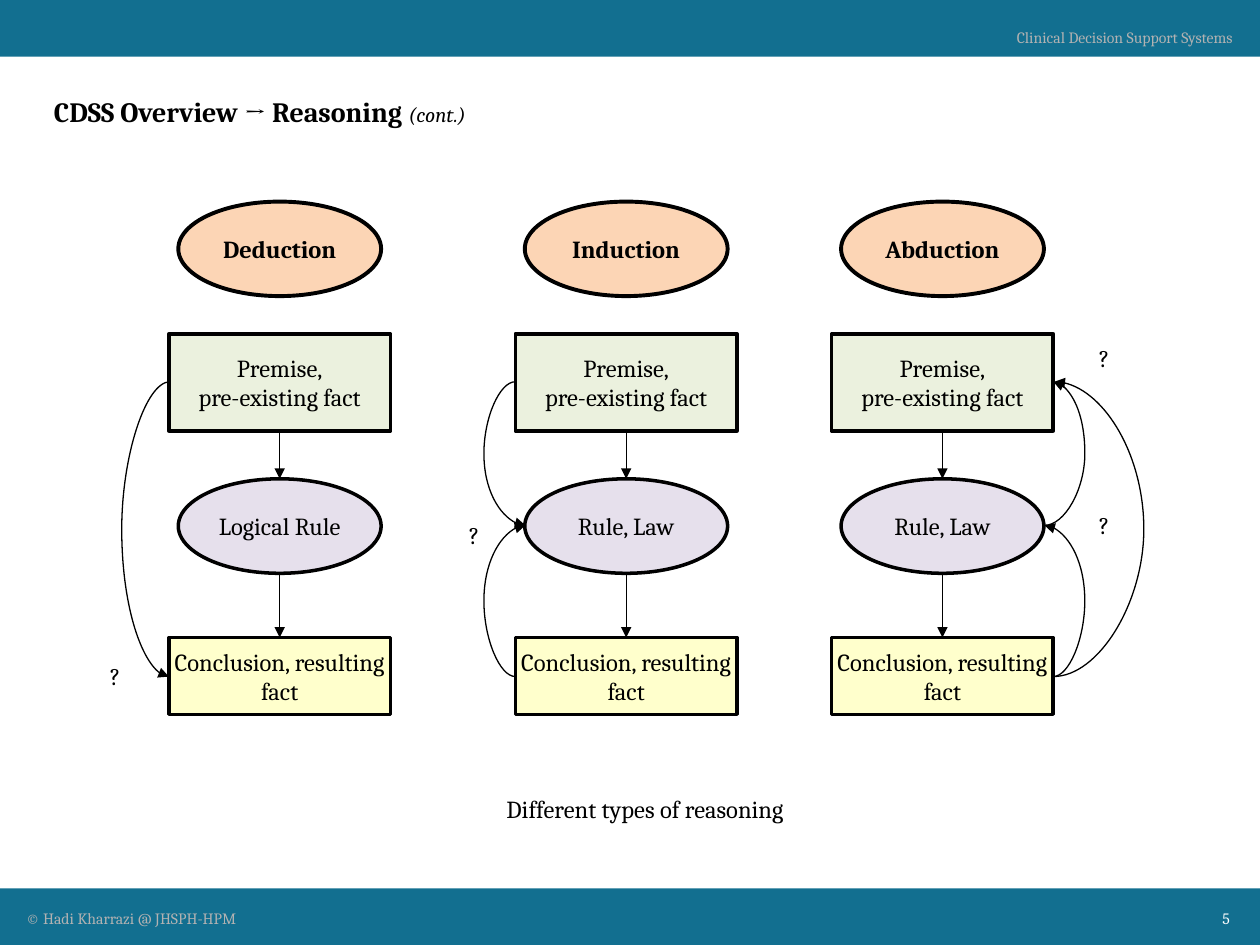
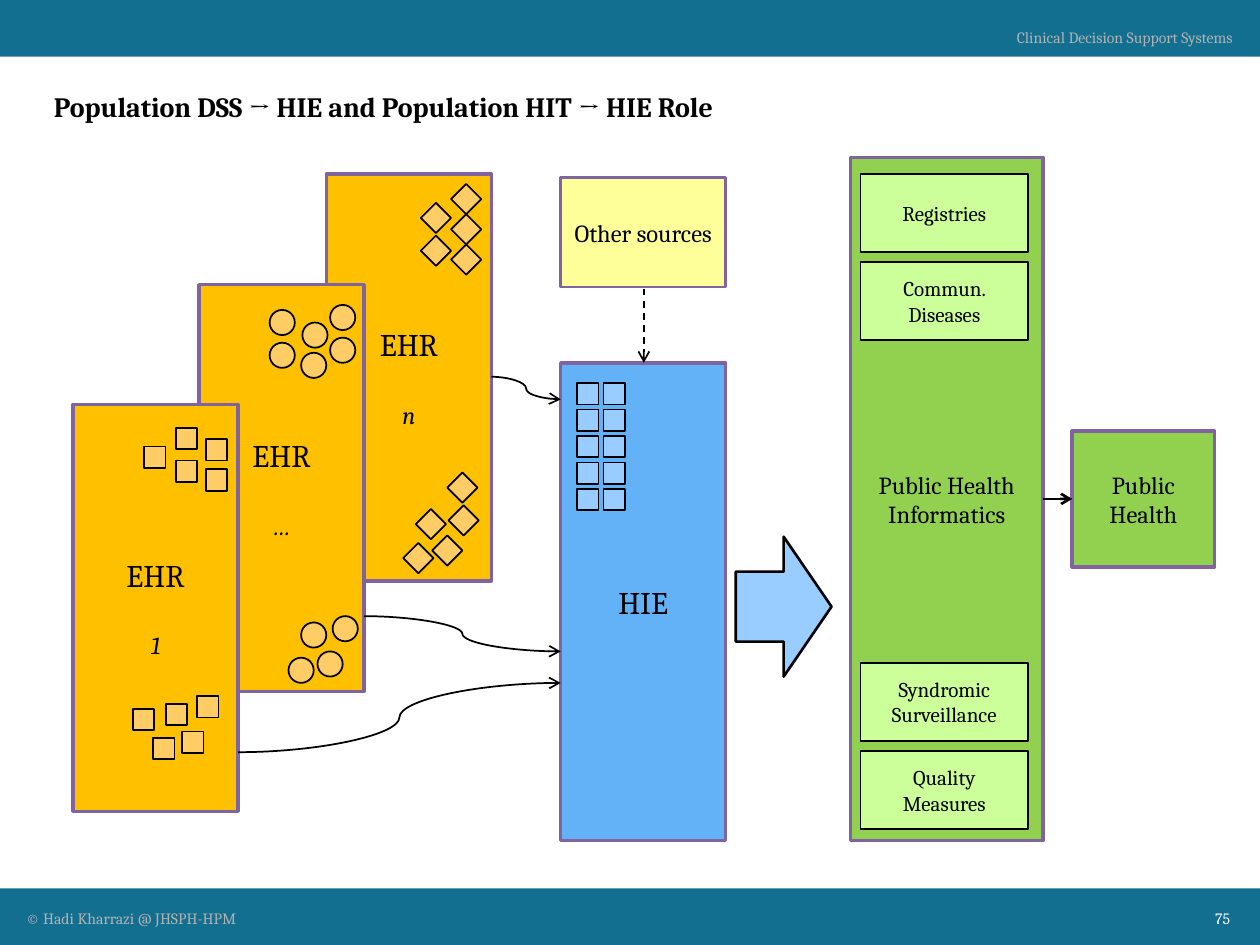
from pptx import Presentation
from pptx.dml.color import RGBColor
from pptx.enum.dml import MSO_LINE
from pptx.enum.shapes import MSO_CONNECTOR, MSO_SHAPE
from pptx.enum.text import MSO_ANCHOR, PP_ALIGN
from pptx.oxml.ns import qn
from pptx.util import Inches, Pt
from lxml import etree

RECTANGLE, ELLIPSE = MSO_SHAPE.RECTANGLE, MSO_SHAPE.OVAL
DIAMOND, BLOCK_ARROW = MSO_SHAPE.DIAMOND, MSO_SHAPE.RIGHT_ARROW
STRAIGHT, CURVE = MSO_CONNECTOR.STRAIGHT, MSO_CONNECTOR.CURVE
LEFT, CENTER, RIGHT = PP_ALIGN.LEFT, PP_ALIGN.CENTER, PP_ALIGN.RIGHT
TOP, MIDDLE = MSO_ANCHOR.TOP, MSO_ANCHOR.MIDDLE
DASH = MSO_LINE.DASH

THEME = {
    "font": "Cambria",
    "colors": {
        "band": "126F90", "muted": "B2B2B2", "white": "FFFFFF", "black": "000000",
        "peach": "FCD5B5", "sage": "EBF1DE", "lavender": "E6E0EC", "cream": "FFFFCC",
        "amber": "FFC000", "record": "FFCC66", "purple": "8064A2", "yellow": "FFFF99",
        "blue": "63B1F7", "pale blue": "99CCFF", "green": "92D050", "lime": "CCFF99",
    },
    "title": {"size": Pt(16), "bold": True},
    "continued": {"size": Pt(12), "italic": True},
    "heading": {"size": Pt(14), "bold": True},
    "body": {"size": Pt(14)},
    "index": {"size": Pt(14), "italic": True},
    "system": {"size": Pt(18)},
    "program": {"size": Pt(12)},
    "footer": {"size": Pt(9)},
}


def color(name):
    return RGBColor.from_string(THEME["colors"][name])


def add_box(slide, place, paragraphs=(), kind=None, fill=None, line=None, width=1,
            ink="black", align=CENTER, anchor=MIDDLE, inset=None, gap=0):
    """Add a preset shape, or a text box if kind is None; a paragraph is a list of (text, style)."""
    lengths = [Inches(value) for value in place]
    if kind is None:
        shape = slide.shapes.add_textbox(*lengths)
    else:
        shape = slide.shapes.add_shape(kind, *lengths)
        shape.shadow.inherit = False
        shape.fill.solid()
        shape.fill.fore_color.rgb = color(fill)
        if line:
            shape.line.color.rgb = color(line)
            shape.line.width = Pt(width)
        else:
            shape.line.fill.background()
    frame = shape.text_frame
    frame.word_wrap = True
    frame.vertical_anchor = anchor
    if inset is not None:
        for side in ("left", "top", "right", "bottom"):
            setattr(frame, f"margin_{side}", Inches(inset))
    for number, runs in enumerate(paragraphs):
        paragraph = frame.add_paragraph() if number else frame.paragraphs[0]
        paragraph.alignment = align
        if number:
            paragraph.space_before = Pt(gap)
        for text, style in runs:
            for row, part in enumerate(text.split("\n")):
                if row:
                    paragraph.add_line_break()
                run = paragraph.add_run()
                run.text = part
                for name, value in {"name": THEME["font"], **THEME[style]}.items():
                    setattr(run.font, name, value)
                run.font.color.rgb = color(ink)


def add_arrow(slide, start, end, head, width, bend=None, dash=None):
    """Add an arrow; bend is the x at which a curved one turns."""
    connector = slide.shapes.add_connector(
        STRAIGHT if bend is None else CURVE, *[Inches(value) for value in (*start, *end)])
    connector.line.color.rgb = color("black")
    connector.line.width = Pt(width)
    if dash:
        connector.line.dash_style = dash
    properties = connector._element.spPr
    etree.SubElement(properties.find(qn("a:ln")), qn("a:tailEnd"), type=head)
    etree.SubElement(properties, qn("a:effectLst"))
    if bend is not None:
        share = round((bend - start[0]) / (end[0] - start[0]) * 100000)
        values = properties.find(qn("a:prstGeom")).find(qn("a:avLst"))
        etree.SubElement(values, qn("a:gd"), name="adj1", fmla=f"val {share}")


presentation = Presentation()
presentation.slide_width, presentation.slide_height = Inches(10), Inches(7.5)

# Bands, footers and titles
pages = [
    ("5", 0.67, MIDDLE, [("CDSS Overview → Reasoning ", "title"), ("(cont.)", "continued")]),
    ("75", 0.66, TOP, [("Population DSS → HIE and Population HIT → HIE Role", "title")]),
]
slides = []
for page, title_top, title_anchor, title in pages:
    slide = presentation.slides.add_slide(presentation.slide_layouts[6])
    slides.append(slide)
    for band_top in (0, 7.05):
        add_box(slide, (0, band_top, 10, 0.45), kind=RECTANGLE, fill="band")
    for place, text, ink, align in [
        ((0.11, 7.16, 6.21, 0.25), "© Hadi Kharrazi @ JHSPH-HPM", "muted", LEFT),
        ((7.28, 0.17, 2.6, 0.25), "Clinical Decision Support Systems", "muted", RIGHT),
        ((9.21, 7.16, 0.65, 0.25), page, "white", RIGHT),
    ]:
        add_box(slide, place, [[(text, "footer")]], ink=ink, align=align, anchor=TOP)
    add_box(slide, (0.33, title_top, 9.42, 0.42), [title], align=LEFT, anchor=title_anchor)
reasoning, exchange = slides

# Reasoning: one column of four steps for each type
for center, name, rule in [
    (2.22, "Deduction", "Logical Rule"),
    (4.97, "Induction", "Rule, Law"),
    (7.48, "Abduction", "Rule, Law"),
]:
    for text, style, kind, fill, top, width, height, border in [
        (name, "heading", ELLIPSE, "peach", 1.6, 1.61, 0.75, 2.25),
        ("Premise,\npre-existing fact", "body", RECTANGLE, "sage", 2.65, 1.76, 0.77, 2),
        (rule, "body", ELLIPSE, "lavender", 3.8, 1.61, 0.75, 2),
        ("Conclusion, resulting fact", "body", RECTANGLE, "cream", 5.06, 1.76, 0.61, 2),
    ]:
        add_box(reasoning, (center - width / 2, top, width, height), [[(text, style)]],
                kind, fill, "black", border, inset=0)
    for top, bottom in [(3.42, 3.8), (4.55, 5.06)]:
        add_arrow(reasoning, (center, top), (center, bottom), "triangle", 0.75)

# Reasoning: inferred steps, question marks and caption
premise_y, rule_y, conclusion_y = 3.03, 4.17, 5.37
for start, end, bend in [
    ((1.35, premise_y), (1.34, conclusion_y), 0.96),
    ((4.09, premise_y), (4.17, rule_y), 3.84),
    ((4.09, conclusion_y), (4.17, rule_y), 3.84),
    ((8.36, conclusion_y), (8.29, rule_y), 8.61),
    ((8.29, rule_y), (8.36, premise_y), 8.61),
    ((8.36, conclusion_y), (8.37, premise_y), 9.09),
]:
    add_arrow(reasoning, start, end, "triangle", 0.75, bend)
for left, top in [(0.73, 5.2), (3.58, 4.08), (8.58, 4), (8.58, 2.67)]:
    add_box(reasoning, (left, top, 0.37, 0.34), [[("?", "body")]], anchor=TOP)
add_box(reasoning, (3.58, 6.25, 3.08, 0.34), [[("Different types of reasoning", "body")]],
        anchor=TOP)

# Exchange: overlapping record systems, each with its own kind of record
for left, top, index, kind, size, centers in [
    (2.59, 1.38, "n", DIAMOND, 0.24, [
        (3.68, 4.13), (3.42, 4.16), (3.55, 4.37), (3.32, 4.43), (3.67, 3.87),
        (3.7, 2.06), (3.46, 1.99), (3.7, 1.82), (3.7, 1.58), (3.46, 1.73)]),
    (1.58, 2.26, "…", ELLIPSE, 0.2, [
        (2.74, 4.99), (2.49, 5.04), (2.39, 5.32), (2.62, 5.27), (2.24, 2.82),
        (2.24, 2.56), (2.5, 2.66), (2.72, 2.52), (2.72, 2.78), (2.49, 2.9)]),
    (0.58, 3.21, "1", RECTANGLE, 0.17, [
        (1.65, 5.61), (1.4, 5.67), (1.53, 5.89), (1.3, 5.94), (1.14, 5.71),
        (1.72, 3.81), (1.48, 3.74), (1.72, 3.57), (1.23, 3.63), (1.48, 3.48)]),
]:
    add_box(exchange, (left, top, 1.31, 3.23), [[("EHR", "system")], [(index, "index")]],
            RECTANGLE, "amber", "purple", 2, gap=21)
    for x, y in centers:
        add_box(exchange, (x - size / 2, y - size / 2, size, size),
                kind=kind, fill="record", line="black")

# Exchange: main blocks
for place, text, style, fill, border in [
    ((4.45, 1.41, 1.31, 0.87), "Other sources", "body", "yellow", 1.5),
    ((4.45, 2.88, 1.31, 3.79), "HIE", "system", "blue", 2),
    ((6.75, 1.25, 1.53, 5.42), "Public Health Informatics", "body", "green", 2),
    ((8.51, 3.42, 1.13, 1.08), "Public Health", "body", "green", 2),
]:
    add_box(exchange, place, [[(text, style)]], RECTANGLE, fill, "purple", border)

# Exchange: uniform records and public health programs
for row in range(5):
    for column in range(2):
        add_box(exchange, (4.58 + 0.21 * column, 3.04 + 0.21 * row, 0.17, 0.17),
                kind=RECTANGLE, fill="pale blue", line="black")
for top, program in [(1.38, "Registries"), (2.08, "Commun. Diseases"),
                     (5.26, "Syndromic Surveillance"), (5.96, "Quality Measures")]:
    add_box(exchange, (6.83, top, 1.33, 0.62), [[(program, "program")]],
            RECTANGLE, "lime", "black")

# Exchange: flows
add_box(exchange, (5.84, 4.26, 0.76, 1.11), kind=BLOCK_ARROW, fill="pale blue",
        line="black", width=1.5)
for start, end in [((3.9, 2.99), (4.45, 3.17)), ((2.89, 4.89), (4.45, 5.17)),
                   ((1.89, 5.97), (4.45, 5.42))]:
    add_arrow(exchange, start, end, "arrow", 1, bend=(start[0] + end[0]) / 2)
add_arrow(exchange, (5.11, 2.29), (5.11, 2.88), "arrow", 1, dash=DASH)
add_arrow(exchange, (8.28, 3.96), (8.51, 3.96), "arrow", 1.5)

presentation.save("out.pptx")
